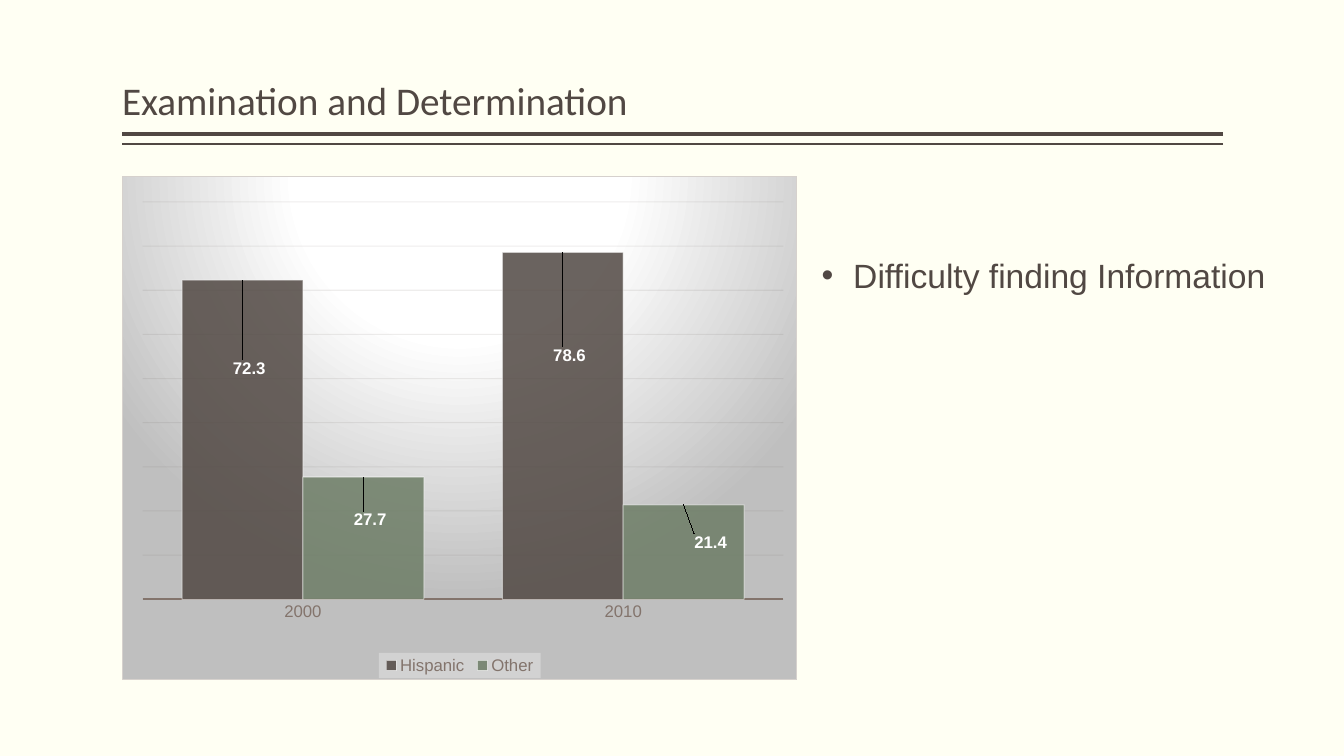
import dataclasses

import lxml.etree
import pptx
import pptx.chart.data
import pptx.dml.color
import pptx.enum.chart
import pptx.enum.shapes
import pptx.enum.text
import pptx.oxml.ns
import pptx.oxml.xmlchemy
import pptx.util

qn = pptx.oxml.ns.qn
make = pptx.oxml.xmlchemy.OxmlElement
Pt = pptx.util.Pt


@dataclasses.dataclass(frozen=True)
class Theme:
    """Colours, fonts and type sizes of the slide."""
    paper: str = "FFFFF3"
    ink: str = "514843"
    green: str = "6D7D66"
    taupe: str = "83746C"
    grid: str = "5B514B"
    edge: str = "D6D1CD"
    white: str = "FFFFFF"
    grey: str = "BFBFBF"
    mist: str = "F2F2F2"
    head: str = "Calibri"
    text: str = "Arial"
    big: int = 28
    mid: int = 24
    small: int = 12
    tiny: int = 10


def add(parent, tag, **attrs):
    """Append a child element with the given attributes."""
    child = lxml.etree.SubElement(parent, qn(tag))
    for key, val in attrs.items():
        child.set(key, str(val))
    return child


def paint(form, shade, alpha=100):
    """Give a format a solid colour and opacity."""
    fill = form.fill
    fill.solid()
    fill.fore_color.rgb = pptx.dml.color.RGBColor.from_string(shade)
    if alpha < 100:
        clr = fill._xPr.find(qn("a:solidFill"))[0]
        add(clr, "a:alpha", val=alpha * 1000)


def stroke(line, shade, width, alpha=100):
    """Set the colour, width and opacity of a line."""
    paint(line, shade, alpha)
    line.width = Pt(width)


def style(font, name, size, shade, bold=False):
    """Set the face, size, colour and weight of a font."""
    font.name, font.size, font.bold = name, Pt(size), bold
    paint(font, shade)


def place(put, **spots):
    """Insert a manual chart layout with the given inserter."""
    layout = make("c:layout")
    put(layout)
    manual = add(layout, "c:manualLayout")
    for key, val in spots.items():
        add(manual, "c:" + key, val=val)


class Deck:
    """Draws elements on one slide, with lengths in percent of its size."""

    def __init__(self, theme):
        """Open a deck with one titled slide."""
        self.theme = theme
        self.show = pptx.Presentation()
        self.show.slide_width = pptx.util.Inches(13.33)
        self.show.slide_height = pptx.util.Inches(7.5)
        self.slide = self.show.slides.add_slide(self.show.slide_layouts[1])
        paint(self.slide.background, theme.paper)

    def box(self, x, y, w, h):
        """Turn shares of the slide into lengths."""
        wide, high = self.show.slide_width, self.show.slide_height
        return [int(part * full / 100) for part, full in
                zip((x, y, w, h), (wide, high, wide, high))]

    def fit(self, shape, area):
        """Move a shape and return its text frame and first paragraph."""
        shape.left, shape.top, shape.width, shape.height = self.box(*area)
        frame = shape.text_frame
        frame.word_wrap = True
        frame.auto_size = pptx.enum.text.MSO_AUTO_SIZE.NONE
        para = frame.paragraphs[0]
        para.alignment = pptx.enum.text.PP_ALIGN.LEFT
        para.space_before = Pt(0)
        return frame, para

    def title(self, words, area):
        """Fill the title placeholder."""
        frame, para = self.fit(self.slide.shapes.title, area)
        frame.vertical_anchor = pptx.enum.text.MSO_ANCHOR.BOTTOM
        frame.margin_left = frame.margin_right = 0
        para.line_spacing = 0.9
        run = para.add_run()
        run.text = words
        style(run.font, self.theme.head, self.theme.big, self.theme.ink)

    def point(self, words, area):
        """Fill the body placeholder with one bullet."""
        frame, para = self.fit(self.slide.placeholders[1], area)
        frame.vertical_anchor = pptx.enum.text.MSO_ANCHOR.TOP
        props = para._p.get_or_add_pPr()
        props.set("marL", "285750")
        props.set("indent", "-285750")
        add(props, "a:buFont", typeface=self.theme.text)
        add(props, "a:buChar", char="•")
        run = para.add_run()
        run.text = words
        style(run.font, self.theme.text, self.theme.mid, self.theme.ink)

    def rule(self, x, y, w, width):
        """Draw a horizontal rule."""
        left, top, span, _ = self.box(x, y, w, 0)
        line = self.slide.shapes.add_connector(
            pptx.enum.shapes.MSO_CONNECTOR.STRAIGHT,
            left + span, top, left, top)
        stroke(line.line, self.theme.ink, width)
        add(line._element.spPr, "a:effectLst")

    def bars(self, cats, rows, area):
        """Add the column chart from rows of name, colour, values, shifts."""
        theme = self.theme
        data = pptx.chart.data.CategoryChartData()
        data.categories = cats
        for name, _, vals, _ in rows:
            data.add_series(name, vals)
        chart = self.slide.shapes.add_chart(
            pptx.enum.chart.XL_CHART_TYPE.COLUMN_CLUSTERED,
            *self.box(*area), data).chart
        chart.has_title = False
        style(chart.font, theme.text, theme.tiny, theme.ink)
        plot = chart.plots[0]
        plot.gap_width, plot.overlap = 65, 0
        plot.vary_by_categories = False
        for series, (_, shade, _, shifts) in zip(plot.series, rows):
            paint(series.format, shade, 85)
            stroke(series.format.line, theme.white, 0.75, 50)
            for i, (dx, dy) in enumerate(shifts):
                label = series.points[i].data_label
                style(label.font, theme.text, theme.small, theme.white, True)
                label.position = pptx.enum.chart.XL_LABEL_POSITION.INSIDE_END
                mark = label._get_or_add_dLbl().find(qn("c:idx"))
                place(mark.addnext, x=dx, y=dy)
        self.axes(chart)
        self.legend(chart)
        self.frame(chart)

    def axes(self, chart):
        """Style the axes and gridlines."""
        theme = self.theme
        none = pptx.enum.chart.XL_TICK_MARK.NONE
        cat, val = chart.category_axis, chart.value_axis
        cat.major_tick_mark = cat.minor_tick_mark = none
        style(cat.tick_labels.font, theme.text, theme.small, theme.taupe)
        stroke(cat.format.line, theme.taupe, 1.5)
        val.visible = False
        val.minimum_scale, val.maximum_scale, val.major_unit = 0, 90, 10
        stroke(val.major_gridlines.format.line, theme.grid, 0.75, 10)

    def legend(self, chart):
        """Put the legend on a pale strip at the bottom."""
        theme = self.theme
        chart.has_legend = True
        key = chart.legend
        key.position = pptx.enum.chart.XL_LEGEND_POSITION.BOTTOM
        key.include_in_layout = False
        style(key.font, theme.text, theme.small, theme.taupe)
        root = key._element
        place(root.find(qn("c:legendPos")).addnext, xMode="edge",
              yMode="edge", x=0.38, y=0.95, w=0.24, h=0.05)
        props = make("c:spPr")
        root.find(qn("c:txPr")).addprevious(props)
        clr = add(add(props, "a:solidFill"), "a:srgbClr", val=theme.mist)
        add(clr, "a:alpha", val=39000)

    def frame(self, chart):
        """Place the plot and give the chart its gradient and border."""
        theme = self.theme
        root = chart._chartSpace.find(qn("c:chart"))
        area = root.find(qn("c:plotArea"))
        for old in area.findall(qn("c:layout")):
            area.remove(old)
        place(area[0].addprevious, layoutTarget="inner", xMode="edge",
              yMode="edge", x=0.03, y=0.05, w=0.95, h=0.79)
        props = make("c:spPr")
        root.addnext(props)
        grad = add(props, "a:gradFill", rotWithShape=1)
        stops = add(grad, "a:gsLst")
        for spot, shade in (0, theme.white), (39, theme.white), (100, theme.grey):
            add(add(stops, "a:gs", pos=spot * 1000), "a:srgbClr", val=shade)
        focus = add(grad, "a:path", path="circle")
        add(focus, "a:fillToRect", l=50000, t=-80000, r=50000, b=180000)
        line = add(props, "a:ln", w=Pt(0.75))
        add(add(line, "a:solidFill"), "a:srgbClr", val=theme.edge)


def main():
    """Build and save the slide."""
    theme = Theme()
    deck = Deck(theme)
    left, span = 9.08, 81.92
    for y, width in (17.73, 3), (19.07, 1):
        deck.rule(left, y, span, width)
    deck.title("Examination and Determination", (left, 1.07, span, 16))
    rows = [("Hispanic", theme.ink, (72.3, 78.6), ((0.01, 0.15), (0.01, 0.18))),
            ("Other", theme.green, (27.7, 21.4), ((0.01, 0.06), (0.04, 0.05)))]
    deck.bars(("2000", "2010"), rows, (left, 23.33, 50.26, 66.67))
    deck.point("Difficulty finding Information", (60.39, 33.07, 37.13, 10.8))
    deck.show.save("out.pptx")


if __name__ == "__main__":
    main()
